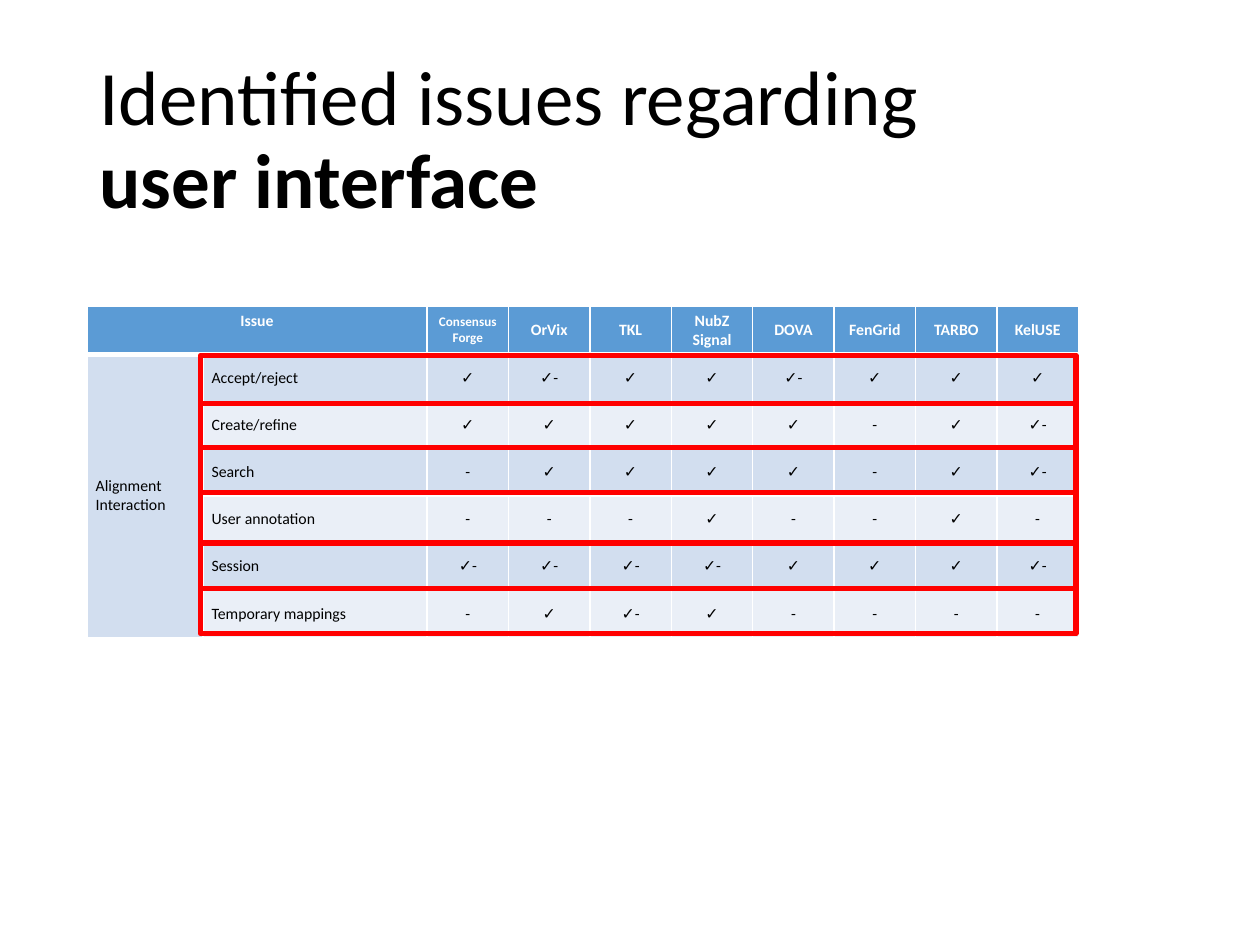
from pptx import Presentation
from pptx.dml.color import RGBColor
from pptx.enum.shapes import MSO_SHAPE as Shape
from pptx.enum.text import MSO_ANCHOR as Anchor, MSO_AUTO_SIZE as Auto, PP_ALIGN as Align
from pptx.oxml import parse_xml
from pptx.oxml.ns import nsdecls
from pptx.util import Inches, Pt

FONT = "Calibri"
LEFT, TOP, WIDTH, HEIGHT = 0.69, 2.43, 7.87, 2.62
GROUP, ISSUE = 0.92, 1.78
BOX_LEFT, BOX_WIDTH = 1.59, 6.95
BOX_EDGES = [2.82, 3.2, 3.55, 3.91, 4.31, 4.67, 5.03]
BLUE, WHITE, BLACK, RED = "5B9BD5", "FFFFFF", "000000", "FF0000"
BANDS = ["D2DEEF", "EAEFF7"]

TOOLS = ["Consensus\nForge", "OrVix", "TKL", "NubZ\vSignal",
         "DOVA", "FenGrid", "TARBO", "KelUSE"]
MARKS = {
    "Accept/reject": "✓ ✓- ✓ ✓ ✓- ✓ ✓ ✓",
    "Create/refine": "✓ ✓ ✓ ✓ ✓ - ✓ ✓-",
    "Search": "- ✓ ✓ ✓ ✓ - ✓ ✓-",
    "User annotation": "- - - ✓ - - ✓ -",
    "Session": "✓- ✓- ✓- ✓- ✓ ✓ ✓ ✓-",
    "Temporary mappings": "- ✓ ✓- ✓ - - - -",
}


def color(code):
    return RGBColor.from_string(code)


def add_title(slide):
    title = slide.shapes.title
    title.left, title.top = Inches(LEFT), Inches(0.4)
    title.width, title.height = Inches(8.62), Inches(1.45)
    frame = title.text_frame
    frame.auto_size = Auto.NONE
    frame.vertical_anchor = Anchor.MIDDLE
    para = frame.paragraphs[0]
    para.alignment, para.line_spacing = Align.LEFT, 0.9
    para.font.name, para.font.size = FONT, Pt(44)
    para.font.color.rgb = color(BLACK)
    para.add_run().text = "Identified issues regarding "
    para.add_line_break()
    part = para.add_run()
    part.text, part.font.bold = "user interface", True


def set_lines(cell, row):
    """White rules, thicker below the header row."""
    sizes = {"L": 1, "R": 1, "T": 3 if row == 1 else 1, "B": 3 if row == 0 else 1}
    props = cell._tc.get_or_add_tcPr()
    for side, size in sizes.items():
        props.append(parse_xml(
            f'<a:ln{side} {nsdecls("a")} w="{Pt(size)}"><a:solidFill>'
            f'<a:srgbClr val="{WHITE}"/></a:solidFill></a:ln{side}>'))


def fill_cell(cell, text, row, col):
    head = row == 0
    set_lines(cell, row)
    cell.fill.solid()
    cell.fill.fore_color.rgb = color(
        BLUE if head else BANDS[0] if col == 0 else BANDS[(row - 1) % 2])
    cell.margin_left = cell.margin_right = Inches(0.07)
    cell.margin_top = cell.margin_bottom = Inches(0.04)
    cell.vertical_anchor = Anchor.TOP if head and col == 0 else Anchor.MIDDLE
    cell.text_frame.text = text
    for para in cell.text_frame.paragraphs:
        para.alignment = Align.CENTER if head or col > 1 else Align.LEFT
        para.font.name, para.font.bold = FONT, head
        para.font.size = Pt(7.5 if text == TOOLS[0] else 9)
        para.font.color.rgb = color(WHITE if head else BLACK)


def add_grid(slide):
    rows = [["Issue", "", *TOOLS]]
    rows += [["", name, *marks.split()] for name, marks in MARKS.items()]
    rows[1][0] = "Alignment Interaction"
    table = slide.shapes.add_table(
        len(rows), len(rows[0]), Inches(LEFT), Inches(TOP),
        Inches(WIDTH), Inches(HEIGHT)).table
    tool = (WIDTH - GROUP - ISSUE) / len(TOOLS)
    for col, width in zip(table.columns, [GROUP, ISSUE] + [tool] * len(TOOLS)):
        col.width = Inches(width)
    for line in table.rows:
        line.height = Inches(HEIGHT / len(rows))
    for r, row in enumerate(rows):
        for c, text in enumerate(row):
            fill_cell(table.cell(r, c), text, r, c)
    # Spans for the issue header and the group name
    table.cell(0, 0).merge(table.cell(0, 1))
    table.cell(1, 0).merge(table.cell(len(rows) - 1, 0))


def add_box(slide, top, end):
    box = slide.shapes.add_shape(
        Shape.RECTANGLE, Inches(BOX_LEFT), Inches(top),
        Inches(BOX_WIDTH), Inches(end - top))
    box.shadow.inherit = False
    box.fill.background()
    box.line.color.rgb = color(RED)
    box.line.width = Pt(3)


def main():
    deck = Presentation()
    deck.slide_width, deck.slide_height = Inches(10), Inches(7.5)
    slide = deck.slides.add_slide(deck.slide_layouts[5])
    add_title(slide)
    add_grid(slide)
    # Red frames around the issue rows
    for top, end in zip(BOX_EDGES, BOX_EDGES[1:]):
        add_box(slide, top, end)
    deck.save("out.pptx")


if __name__ == "__main__":
    main()
